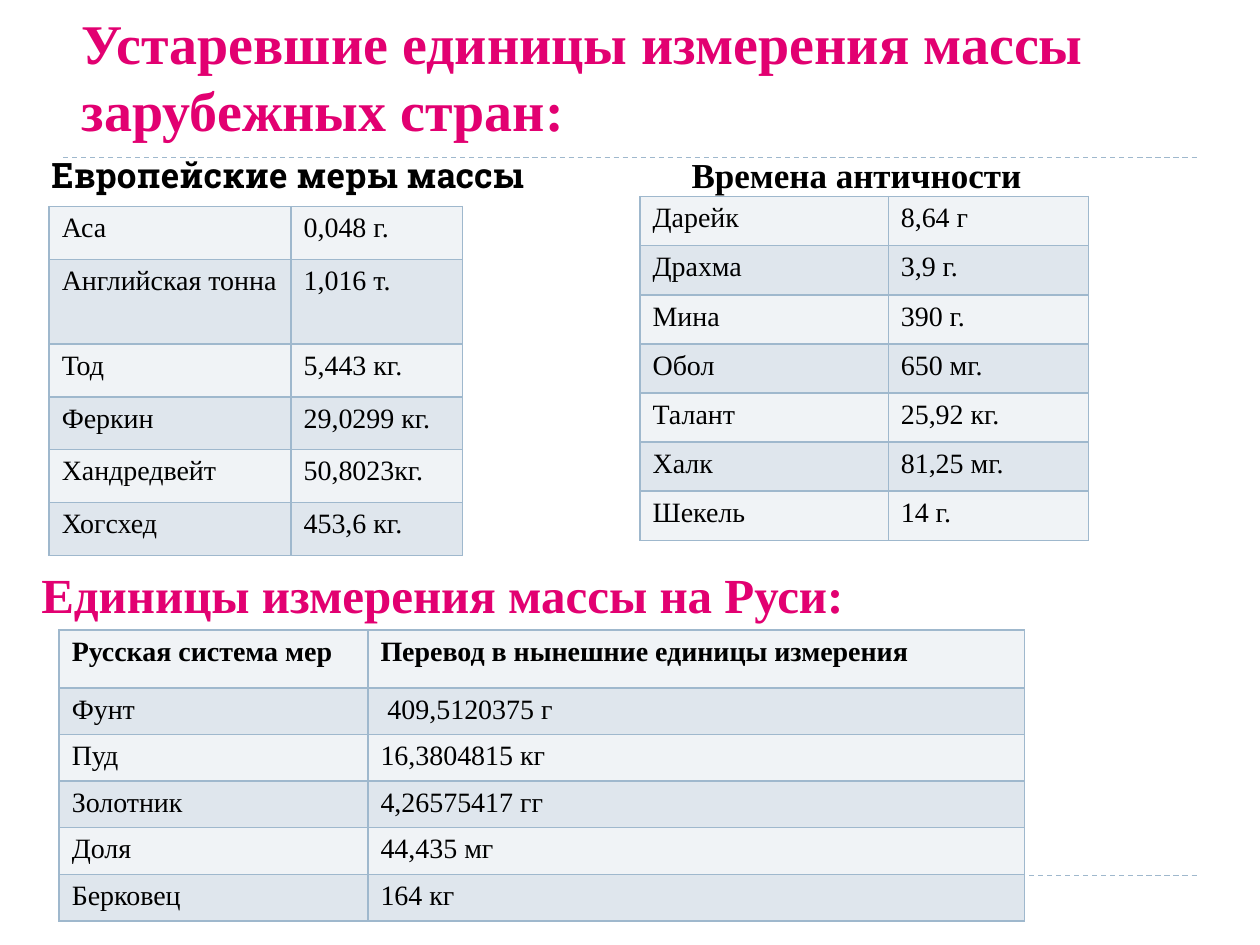
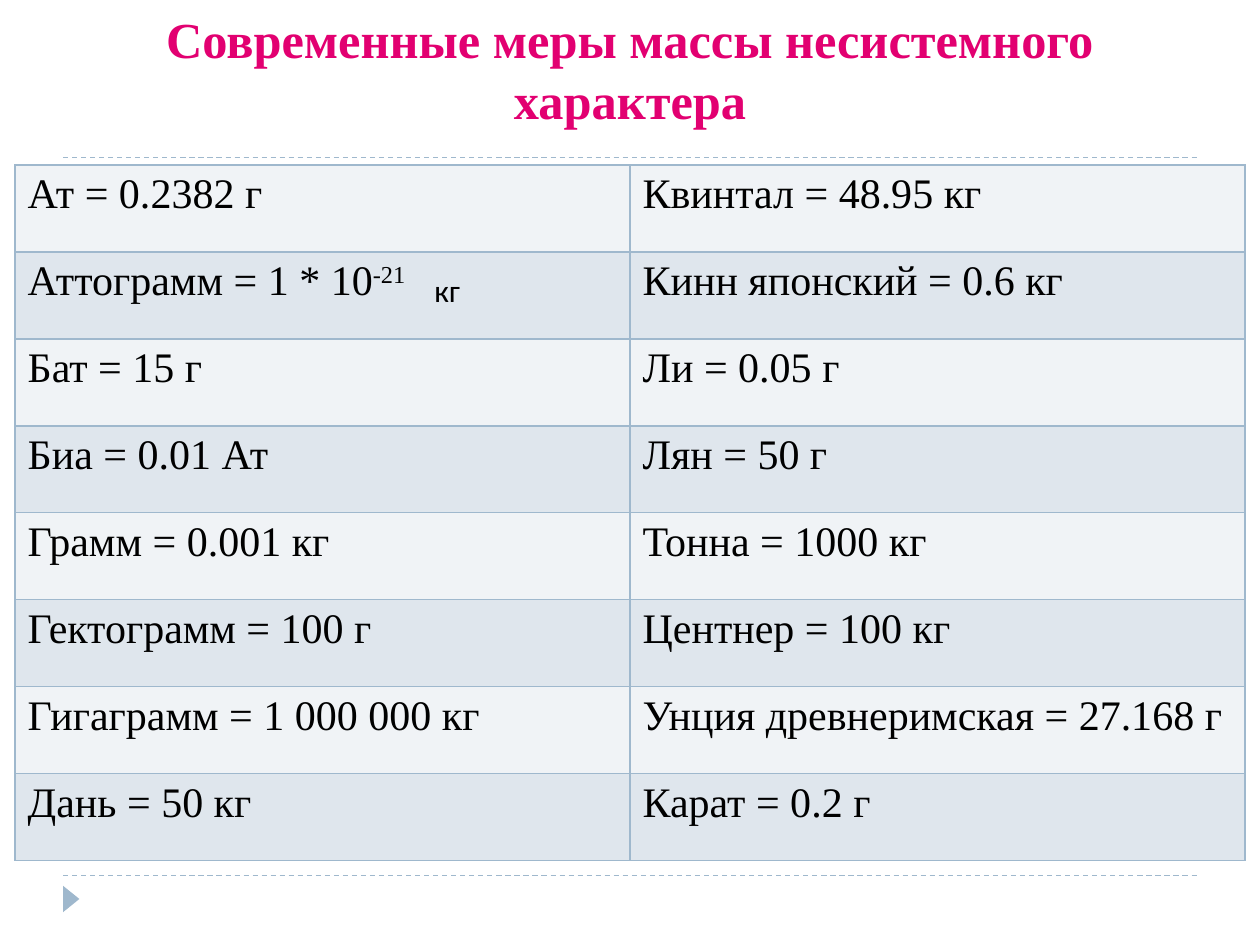
from dataclasses import dataclass

from lxml.etree import SubElement
from pptx import Presentation
from pptx.dml.color import RGBColor
from pptx.enum.dml import MSO_LINE
from pptx.enum.shapes import MSO_CONNECTOR, MSO_SHAPE
from pptx.enum.text import MSO_ANCHOR, PP_ALIGN
from pptx.oxml.ns import qn
from pptx.util import Inches, Pt

COLORS = {
    "title": "E20071",
    "text": "000000",
    "accent": "9FB8CD",
    "light row": "F0F3F6",
    "dark row": "DFE6ED",
}
SERIF = "Times New Roman"
SUPERSCRIPT_MARK = "^"


@dataclass
class Label:
    text: str
    box: tuple[float, float, float, float]
    size: float
    color: str = "text"
    font: str = SERIF
    bold: bool = True
    anchor: MSO_ANCHOR = MSO_ANCHOR.TOP
    align: PP_ALIGN = PP_ALIGN.LEFT


@dataclass
class UnitTable:
    left: float
    top: float
    columns: list[float]
    heights: list[float]
    rows: list[tuple[str, str]]
    size: float = 16
    bold_header: bool = False


def rgb(name: str) -> RGBColor:
    return RGBColor.from_string(COLORS[name])


def add_run(paragraph, text: str, size: float, color: str = "text",
            font: str = SERIF, bold: bool = False):
    run = paragraph.add_run()
    run.text = text
    for attribute, value in {"size": Pt(size), "name": font, "bold": bold}.items():
        setattr(run.font, attribute, value)
    run.font.color.rgb = rgb(color)
    return run


def add_label(slide, label: Label) -> None:
    frame = slide.shapes.add_textbox(*map(Inches, label.box)).text_frame
    for attribute, value in {"word_wrap": True, "vertical_anchor": label.anchor}.items():
        setattr(frame, attribute, value)
    paragraph = frame.paragraphs[0]
    paragraph.alignment = label.align
    add_run(paragraph, label.text, label.size, label.color, label.font, label.bold)


def add_borders(cell) -> None:
    properties = cell._tc.get_or_add_tcPr()
    for position, side in enumerate(("lnL", "lnR", "lnT", "lnB")):
        line = SubElement(properties, qn(f"a:{side}"), w=str(Pt(1)))
        fill = SubElement(line, qn("a:solidFill"))
        SubElement(fill, qn("a:srgbClr"), val=COLORS["accent"])
        properties.insert(position, line)  # borders come before the fill


def add_unit_table(slide, spec: UnitTable) -> None:
    frame = slide.shapes.add_table(
        len(spec.rows), len(spec.columns), Inches(spec.left), Inches(spec.top),
        Inches(sum(spec.columns)), Inches(sum(spec.heights)))
    table = frame.table
    for attribute in ("first_row", "horz_banding"):
        setattr(table, attribute, False)
    for column, width in zip(table.columns, spec.columns):
        column.width = Inches(width)
    for row_index, texts in enumerate(spec.rows):
        row = table.rows[row_index]
        row.height = Inches(spec.heights[row_index])
        for cell, text in zip(row.cells, texts):
            cell.fill.solid()
            cell.fill.fore_color.rgb = rgb("dark row" if row_index % 2 else "light row")
            add_borders(cell)
            base, _, power = text.partition(SUPERSCRIPT_MARK)
            paragraph = cell.text_frame.paragraphs[0]
            add_run(paragraph, base, spec.size, bold=spec.bold_header and row_index == 0)
            if power:
                run = add_run(paragraph, power, spec.size)
                run.font._element.set("baseline", "30000")


def add_frame(slide) -> None:
    """Dashed rules and the corner marker shared by the slides."""
    for y in (6.95, 1.25):
        rule = slide.shapes.add_connector(
            MSO_CONNECTOR.STRAIGHT, Inches(0.5), Inches(y), Inches(9.5), Inches(y))
        rule.line.color.rgb = rgb("accent")
        for attribute, value in {"width": Pt(0.75), "dash_style": MSO_LINE.DASH}.items():
            setattr(rule.line, attribute, value)
        SubElement(rule._element.spPr, qn("a:effectLst"))
    marker = slide.shapes.add_shape(
        MSO_SHAPE.ISOSCELES_TRIANGLE, Inches(0.46), Inches(7.07), Inches(0.21), Inches(0.13))
    marker.rotation = 90
    marker.shadow.inherit = False
    marker.fill.solid()
    marker.fill.fore_color.rgb = rgb("accent")
    marker.line.fill.background()


# Slide 1: obsolete units
OBSOLETE_UNITS = [
    Label("Устаревшие единицы измерения массы зарубежных стран:",
          (0.55, 0.31, 9.02, 0.58), 32, "title", anchor=MSO_ANCHOR.MIDDLE),
    Label("Европейские меры массы", (0.31, 1.17, 5.39, 0.44), 20, font="Roboto Slab"),
    UnitTable(0.39, 1.64, [1.92, 1.36], [0.42, 0.67] + [0.42] * 4, [
        ("Аса", "0,048 г."),
        ("Английская тонна", "1,016 т."),
        ("Тод", "5,443 кг."),
        ("Феркин", "29,0299 кг."),
        ("Хандредвейт", "50,8023кг."),
        ("Хогсхед", "453,6 кг."),
    ]),
    Label("Времена античности", (5.39, 1.17, 4.33, 0.44), 20),
    UnitTable(5.08, 1.56, [1.97, 1.59], [0.39] * 7, [
        ("Дарейк", "8,64 г"),
        ("Драхма", "3,9 г."),
        ("Мина", "390 г."),
        ("Обол", "650 мг."),
        ("Талант", "25,92 кг."),
        ("Халк", "81,25 мг."),
        ("Шекель", "14 г."),
    ]),
    Label("Единицы измерения массы на Руси:", (0.23, 4.3, 9, 0.82), 28, "title",
          anchor=MSO_ANCHOR.MIDDLE),
    UnitTable(0.47, 5, [2.45, 5.21], [0.46] + [0.37] * 5, [
        ("Русская система мер", "Перевод в нынешние единицы измерения"),
        ("Фунт", " 409,5120375 г"),
        ("Пуд", "16,3804815 кг"),
        ("Золотник", "4,26575417 гг"),
        ("Доля", "44,435 мг"),
        ("Берковец", "164 кг"),
    ], bold_header=True),
]

# Slide 2: modern non-system units
MODERN_UNITS = [
    Label("Современные меры массы несистемного характера", (0.39, 0, 9.22, 1.09), 28.8,
          "title", anchor=MSO_ANCHOR.MIDDLE, align=PP_ALIGN.CENTER),
    UnitTable(0.12, 1.31, [4.88] * 2, [0.69] * 8, [
        ("Ат = 0.2382 г", "Квинтал = 48.95 кг"),
        ("Аттограмм = 1 * 10^-21", "Кинн японский = 0.6 кг"),
        ("Бат = 15 г", "Ли = 0.05 г"),
        ("Биа = 0.01 Ат", "Лян = 50 г"),
        ("Грамм = 0.001 кг", "Тонна = 1000 кг"),
        ("Гектограмм = 100 г", "Центнер = 100 кг"),
        ("Гигаграмм = 1 000 000 кг", "Унция древнеримская = 27.168 г"),
        ("Дань = 50 кг", "Карат = 0.2 г"),
    ], size=24),
    Label("кг", (3.35, 2.1, 1.34, 0.4), 18, font="Calibri", bold=False),
]


def main() -> None:
    presentation = Presentation()
    presentation.slide_width = Inches(10)
    presentation.slide_height = Inches(7.5)
    for elements in (OBSOLETE_UNITS, MODERN_UNITS):
        slide = presentation.slides.add_slide(presentation.slide_layouts[6])
        add_frame(slide)
        for element in elements:
            if isinstance(element, Label):
                add_label(slide, element)
            else:
                add_unit_table(slide, element)
    presentation.save("out.pptx")


if __name__ == "__main__":
    main()
